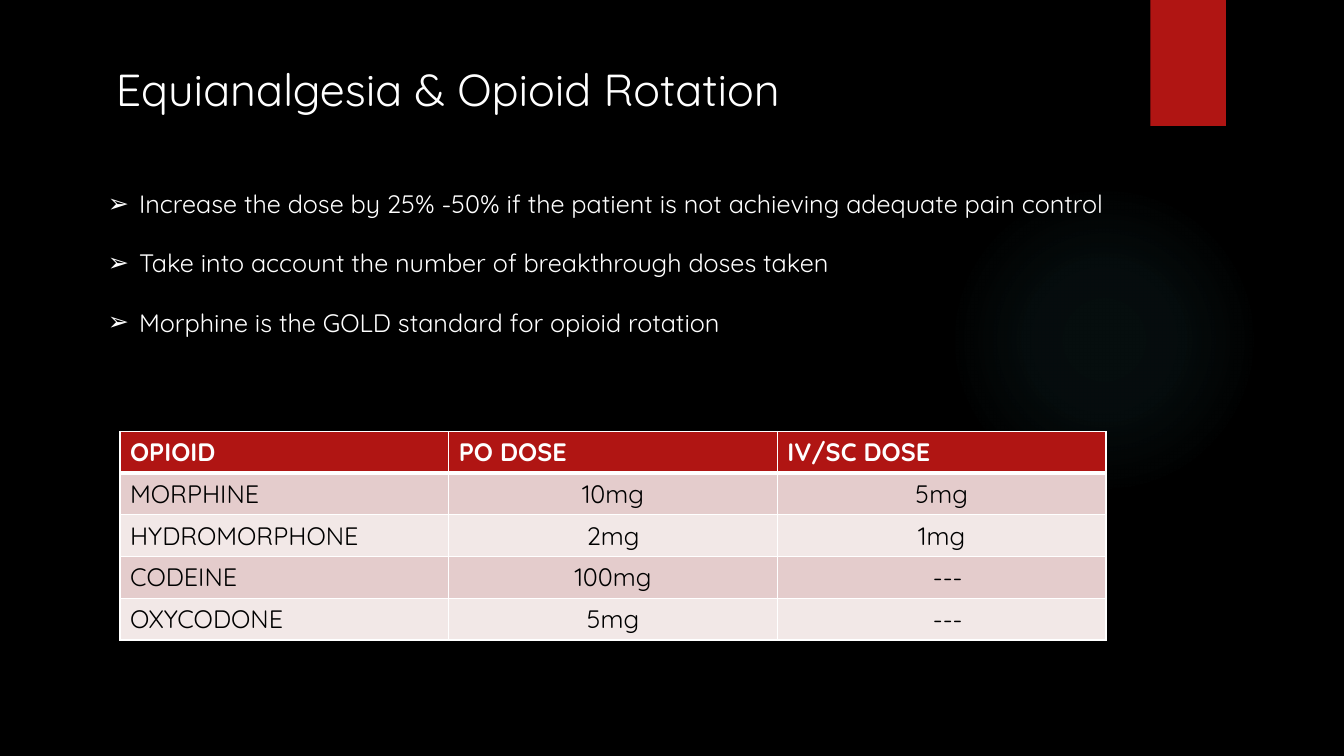
from pptx import Presentation
from pptx.dml.color import RGBColor
from pptx.enum import shapes, text
from pptx.oxml import parse_xml
from pptx.oxml import ns
from pptx.util import Inches, Pt

FONT = "Quicksand"
COLORS = {
    "background": "000000",
    "white": "FFFFFF",
    "black": "000000",
    "red": "B01513",
    "glow": "50B9C1",
    "band_dark": "E4CCCC",
    "band_light": "F2E8E7",
}
BULLETS = [
    "Increase the dose by 25% -50% if the patient is not achieving adequate pain control",
    "Take into account the number of breakthrough doses taken",
    "Morphine is the GOLD standard for opioid rotation",
]
DOSES = [
    ["OPIOID", "PO DOSE", "IV/SC DOSE"],
    ["MORPHINE", "10mg", "5mg"],
    ["HYDROMORPHONE", "2mg", "1mg"],
    ["CODEINE", "100mg", "---"],
    ["OXYCODONE", "5mg", "---"],
]


def rgb(name):
    return RGBColor.from_string(COLORS[name])


def drawing_xml(tag, attributes, content=""):
    return parse_xml(f"<a:{tag} {ns.nsdecls('a')} {attributes}>{content}</a:{tag}>")


def style_runs(paragraph, size, color, bold=False):
    for run in paragraph.runs:
        run.font.name = FONT
        run.font.size = Pt(size)
        run.font.bold = bold
        run.font.color.rgb = rgb(color)


def place(shape, left, top, width, height):
    shape.left, shape.top = Inches(left), Inches(top)
    shape.width, shape.height = Inches(width), Inches(height)
    # Bring the placeholder in front of the decoration
    shape.element.getparent().append(shape.element)


def add_plain_shape(slide, kind, left, top, width, height):
    shape = slide.shapes.add_shape(
        kind, Inches(left), Inches(top), Inches(width), Inches(height))
    shape.shadow.inherit = False
    shape.line.fill.background()
    return shape


def add_glow(slide):
    glow = add_plain_shape(slide, shapes.MSO_SHAPE.OVAL, 9.41, 1.83, 3.08, 3.08)
    glow.fill.background()
    stops = "".join(
        f'<a:gs pos="{position * 1000}"><a:srgbClr val="{COLORS["glow"]}">'
        f'<a:alpha val="{alpha * 1000}"/></a:srgbClr></a:gs>'
        for position, alpha in [(0, 7), (36, 6), (69, 0)])
    center = '<a:fillToRect l="50000" t="50000" r="50000" b="50000"/>'
    gradient = drawing_xml(
        "gradFill", 'rotWithShape="1"',
        f'<a:gsLst>{stops}</a:gsLst><a:path path="circle">{center}</a:path>')
    properties = glow.element.spPr
    properties.replace(properties.find(ns.qn("a:noFill")), gradient)


def add_red_tab(slide):
    tab = add_plain_shape(slide, shapes.MSO_SHAPE.RECTANGLE, 11.41, 0, 0.75, 1.25)
    tab.fill.solid()
    tab.fill.fore_color.rgb = rgb("red")


def set_borders(cell, top, bottom):
    widths = {"lnL": 1, "lnR": 1, "lnT": top, "lnB": bottom}
    properties = cell._tc.get_or_add_tcPr()
    for side, width in widths.items():
        properties.append(drawing_xml(
            side, f'w="{Pt(width)}"',
            f'<a:solidFill><a:srgbClr val="{COLORS["white"]}"/></a:solidFill>'))


def format_cell(cell, row, column):
    set_borders(cell, top=3 if row == 1 else 1, bottom=3 if row == 0 else 1)
    header = row == 0
    band = "band_dark" if row % 2 else "band_light"
    cell.fill.solid()
    cell.fill.fore_color.rgb = rgb("red" if header else band)
    paragraph = cell.text_frame.paragraphs[0]
    if column and not header:
        paragraph.alignment = text.PP_ALIGN.CENTER
    if cell.text == "---":
        cell.margin_left = Inches(0.22)
    style_runs(paragraph, 18, "white" if header else "black", bold=header)


def add_dose_table(slide):
    row_height = 0.41
    frame = slide.shapes.add_table(
        len(DOSES), len(DOSES[0]), Inches(1.19), Inches(4.28),
        Inches(9.78), Inches(row_height * len(DOSES)))
    table = frame.table
    for row, values in enumerate(DOSES):
        table.rows[row].height = Inches(row_height)
        for column, value in enumerate(values):
            cell = table.cell(row, column)
            cell.text = value
            format_cell(cell, row, column)


def fill_title(slide):
    title = slide.shapes.title
    place(title, 1.05, 0.56, 9.32, 0.64)
    title.text_frame.text = "Equianalgesia & Opioid Rotation"
    title.text_frame.vertical_anchor = text.MSO_ANCHOR.TOP
    paragraph = title.text_frame.paragraphs[0]
    paragraph.alignment = text.PP_ALIGN.LEFT
    style_runs(paragraph, 32, "white")


def fill_bullets(slide):
    body = slide.placeholders[1]
    place(body, 0.97, 1.82, 10.76, 1.92)
    frame = body.text_frame
    frame.text = "\n".join(BULLETS)
    frame.word_wrap = False
    for index, paragraph in enumerate(frame.paragraphs):
        properties = paragraph._p.get_or_add_pPr()
        properties.set("marL", str(Inches(0.31)))
        properties.set("indent", str(Inches(-0.31)))
        properties.append(drawing_xml("buChar", 'char="➢"'))
        paragraph.space_before = Pt(20.7 if index else 0)
        style_runs(paragraph, 18, "white")


def main():
    presentation = Presentation()
    presentation.slide_width = Inches(13.33)
    presentation.slide_height = Inches(7.5)
    slide = presentation.slides.add_slide(presentation.slide_layouts[1])
    slide.background.fill.solid()
    slide.background.fill.fore_color.rgb = rgb("background")

    # Decoration
    add_glow(slide)
    add_red_tab(slide)

    # Content
    add_dose_table(slide)
    fill_title(slide)
    fill_bullets(slide)

    presentation.save("out.pptx")


if __name__ == "__main__":
    main()
